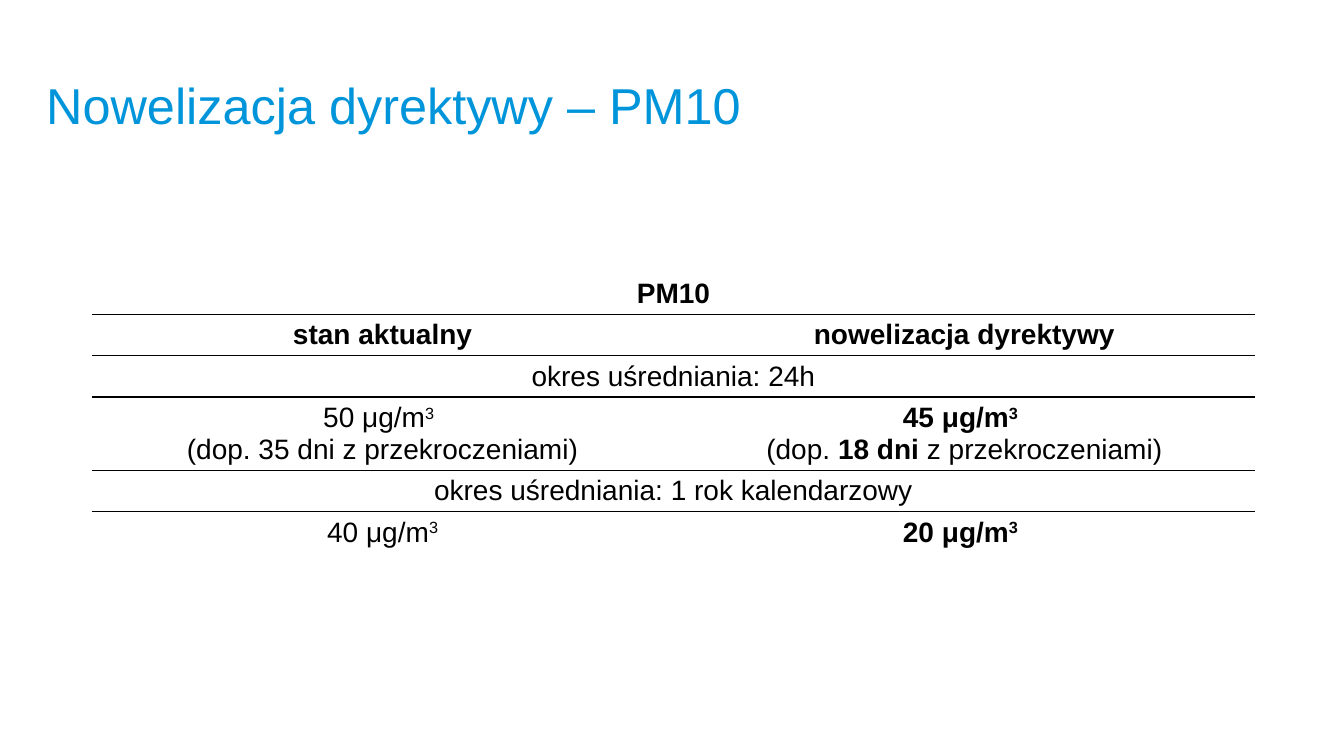
"""Builds a slide comparing current and amended PM10 limits in a ruled table."""
from lxml import etree
from pptx import Presentation
from pptx import util as u
from pptx.dml.color import RGBColor
from pptx.enum import text
from pptx.oxml.ns import qn

BLACK = "000000"
NO_STYLE = "{2D5ABB26-0587-4C30-8999-92F81FD0307C}"
ROW_H = 0.41


def style(p, size, color, bold=False):
    p.font.name, p.font.size, p.font.bold = "Arial", u.Pt(size), bold
    p.font.color.rgb = RGBColor.from_string(color)


def rule(cell, side):
    ln = etree.SubElement(cell._tc.get_or_add_tcPr(), qn(f"a:{side}"), w=str(u.Pt(1)))
    fill = etree.SubElement(ln, qn("a:solidFill"))
    etree.SubElement(fill, qn("a:srgbClr"), val=BLACK)


prs = Presentation()
prs.slide_width, prs.slide_height = u.Inches(13.33), u.Inches(7.5)
s = prs.slides.add_slide(prs.slide_layouts[6])

title = s.shapes.add_textbox(u.Inches(0.36), 0, u.Inches(9.06), u.Inches(2.15))
tf = title.text_frame
tf.word_wrap = True
tf.vertical_anchor = text.MSO_ANCHOR.MIDDLE
p = tf.paragraphs[0]
p.text = "Nowelizacja dyrektywy – PM10"
p.line_spacing = 0.9
style(p, 36, "0095DA")

# Each cell lists paragraphs; each paragraph lists (text, bold, superscript) runs.
rows = [
    [[[("PM10", True, False)]]],
    [[[("stan aktualny", True, False)]], [[("nowelizacja dyrektywy", True, False)]]],
    [[[("okres uśredniania: 24h", False, False)]]],
    [[[("50 μg/m", False, False), ("3", False, True), (" ", False, False),
       ("\n", False, False), ("(dop. 35 dni z przekroczeniami)", False, False)]],
     [[("45 μg/m", True, False), ("3", True, True), (" ", True, False)],
      [("(dop. ", False, False), ("18 dni ", True, False),
       ("z przekroczeniami)", False, False)]]],
    [[[("okres uśredniania: 1 rok kalendarzowy", False, False)]]],
    [[[("40 μg/m", False, False), ("3", False, True)]],
     [[("20 μg/m", True, False), ("3", True, True), (" ", True, False)]]],
]

frame = s.shapes.add_table(len(rows), 2, u.Inches(0.91), u.Inches(2.71),
                           u.Inches(11.54), u.Inches(ROW_H * len(rows)))
table = frame.table
table.first_row = table.horz_banding = False
table._tbl.tblPr.find(qn("a:tableStyleId")).text = NO_STYLE

for i, cells in enumerate(rows):
    table.rows[i].height = u.Inches(ROW_H)
    for cell in table.rows[i].cells:
        if i > 0:
            rule(cell, "lnT")
        if i < len(rows) - 1:
            rule(cell, "lnB")
        cell.fill.background()
        cell.vertical_anchor = text.MSO_ANCHOR.MIDDLE
        cell.margin_top = cell.margin_bottom = u.Inches(0.03)
    if len(cells) == 1:
        table.cell(i, 0).merge(table.cell(i, 1))
    for j, paragraphs in enumerate(cells):
        tf = table.cell(i, j).text_frame
        for k, runs in enumerate(paragraphs):
            p = tf.add_paragraph() if k else tf.paragraphs[0]
            p.alignment = text.PP_ALIGN.CENTER
            first_bold = runs[0][1]
            style(p, 20, BLACK, first_bold)
            for words, bold, raised in runs:
                if words == "\n":
                    p.add_line_break()
                    continue
                r = p.add_run()
                r.text = words
                if bold != first_bold:
                    r.font.bold = bold
                if raised:
                    r.font._element.set("baseline", "30000")

prs.save("out.pptx")
